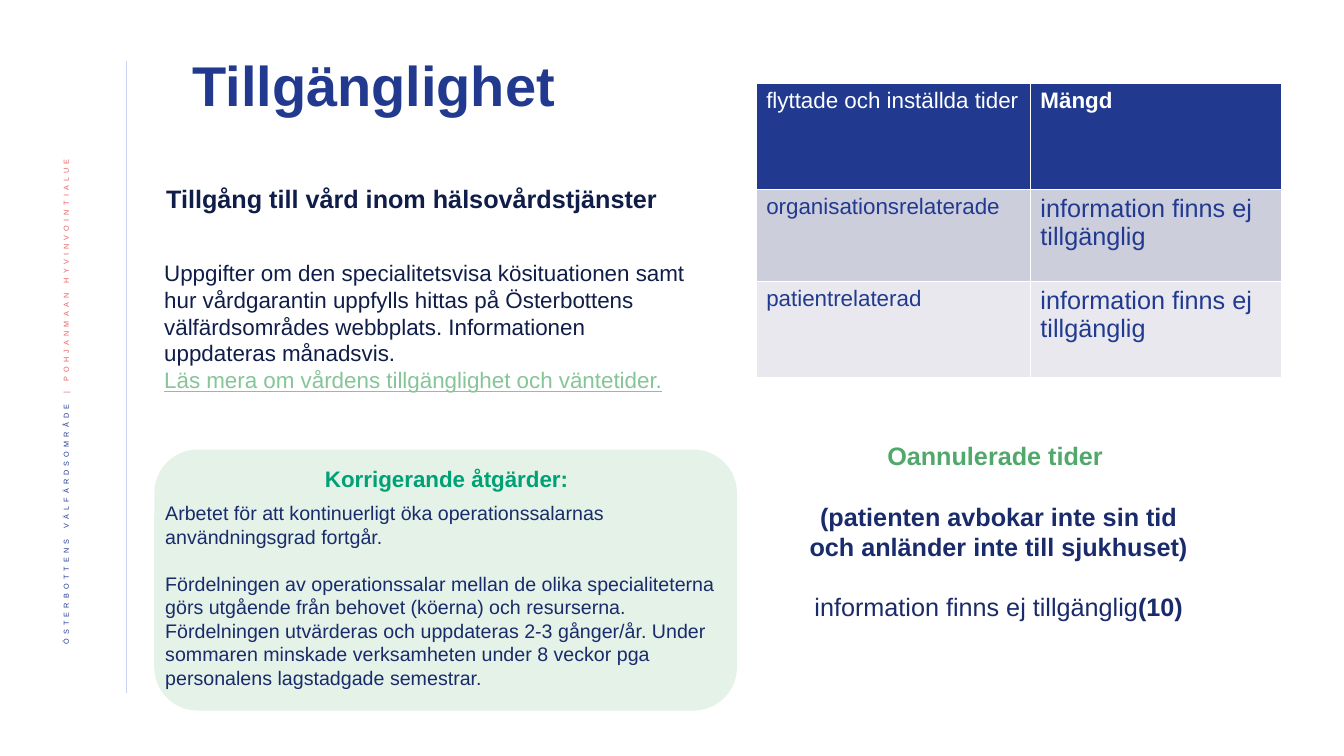
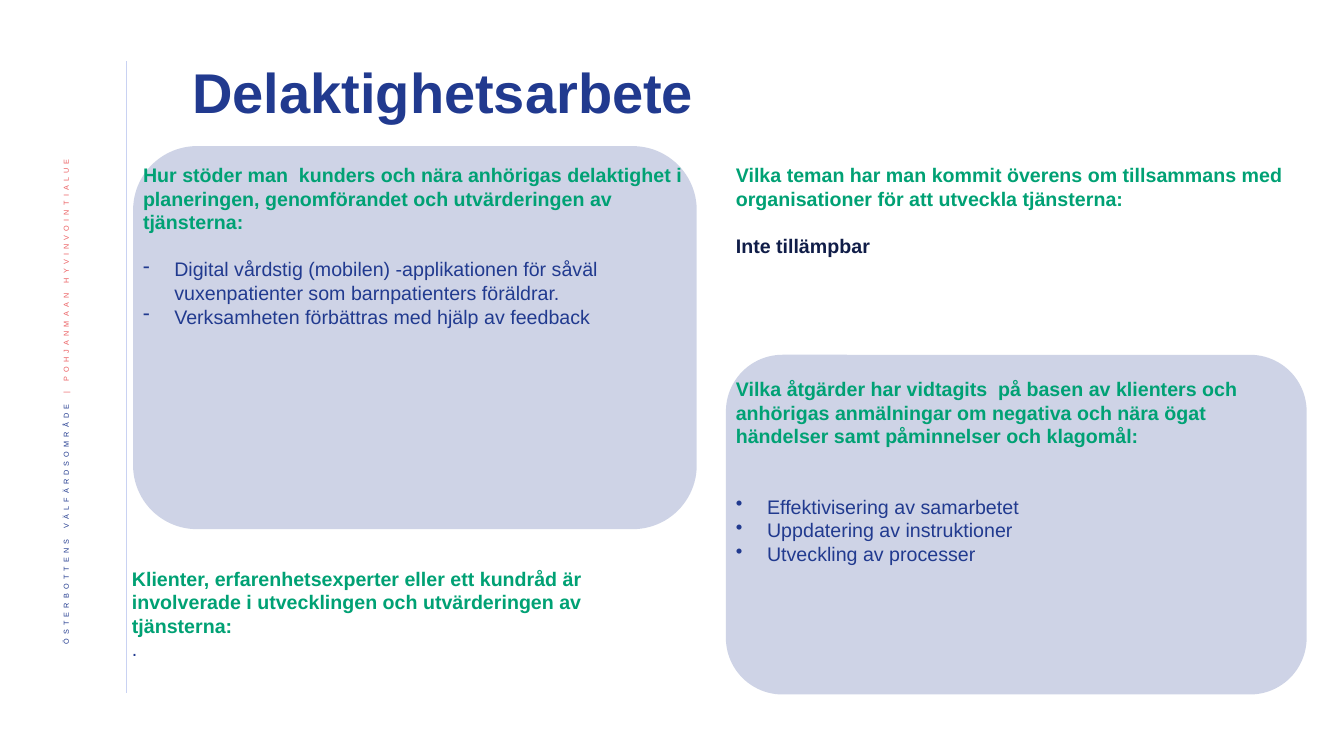
"""Build two slides on access to care and on participation work."""
from dataclasses import dataclass
from typing import NamedTuple, Optional

from lxml.etree import SubElement
from pptx import Presentation
from pptx.dml.color import RGBColor as Rgb
from pptx.enum.shapes import MSO_CONNECTOR as Link, MSO_SHAPE as Shape
from pptx.enum.text import MSO_ANCHOR as Anchor, PP_ALIGN as Align
from pptx.oxml.ns import qn
from pptx.util import Inches, Pt

FONT = "Arial"
LEAD = 1.2
HUES = {
    "blue": "213A8F", "navy": "192B6B", "ink": "101D48", "teal": "00A174",
    "green": "50A86A", "mint": "85C598", "coral": "EB5C5F", "rule": "C9D2F2",
    "white": "FFFFFF", "dark": "CCCEDB", "light": "E8E8EE",
}


class Area(NamedTuple):
    """A place on the slide, in inches."""
    left: float
    top: float
    width: float
    height: float

    def box(self) -> list:
        """Return the four lengths."""
        return [Inches(side) for side in self]


@dataclass
class Line:
    """One paragraph, with the blank lines above it as a gap."""
    text: str
    hue: str
    size: float = 14
    bold: bool = False
    under: bool = False
    align: Align = Align.LEFT
    gap: int = 0
    after: float = 0
    mark: str = ""
    lead: Optional[float] = None
    tail: str = ""


@dataclass
class Block:
    """A text box."""
    area: Area
    lines: list[Line]


@dataclass
class Panel:
    """A pale rounded panel."""
    area: Area
    hue: str


@dataclass
class Page:
    """The content of one slide."""
    title: str
    head: Area
    panels: list[Panel]
    blocks: list[Block]


def style(font, hue: str, size: float, bold: bool) -> None:
    """Format one font."""
    font.name, font.size, font.bold = FONT, Pt(size), bold
    font.color.rgb = Rgb.from_string(HUES[hue])


def write(para, line: Line) -> None:
    """Fill one paragraph."""
    para.text = line.text
    if line.mark:
        props = para._p.get_or_add_pPr()
        props.set("marL", str(Inches(0.31)))
        props.set("indent", str(-Inches(0.31)))
        SubElement(props, qn("a:buChar")).set("char", line.mark)
    para.alignment = line.align
    para.line_spacing = line.lead or Pt(line.size * LEAD)
    para.space_before = Pt(line.gap * line.size * LEAD)
    para.space_after = Pt(line.after)
    style(para.runs[0].font, line.hue, line.size, line.bold)
    if line.under:
        para.runs[0].font.underline = True
    if line.tail:
        run = para.add_run()
        run.text = line.tail
        style(run.font, line.hue, line.size, True)


def add_text(slide, block: Block, anchor: Anchor = Anchor.TOP):
    """Draw a text box and return its frame."""
    frame = slide.shapes.add_textbox(*block.area.box()).text_frame
    frame.word_wrap = True
    frame.vertical_anchor = anchor
    for num, line in enumerate(block.lines):
        write(frame.add_paragraph() if num else frame.paragraphs[0], line)
    return frame


def add_panel(slide, panel: Panel) -> None:
    """Draw a see-through rounded panel."""
    shape = slide.shapes.add_shape(Shape.ROUNDED_RECTANGLE, *panel.area.box())
    shape.shadow.inherit = False
    shape.line.fill.background()
    shape.fill.solid()
    shape.fill.fore_color.rgb = Rgb.from_string(HUES[panel.hue])
    tint = shape._element.spPr.find(qn("a:solidFill")).find(qn("a:srgbClr"))
    SubElement(tint, qn("a:alpha")).set("val", "22000")


def add_side(slide) -> None:
    """Draw the side rule and the upright name."""
    rule = slide.shapes.add_connector(
        Link.STRAIGHT, Inches(1.25), Inches(0.61), Inches(1.25), Inches(6.88))
    rule.line.color.rgb = Rgb.from_string(HUES["rule"])
    rule.line.width = Pt(0.5)
    SubElement(rule._element.spPr, qn("a:effectLst"))
    name = Line("ÖSTERBOTTENS VÄLFÄRDSOMRÅDE ", "blue", 9, align=Align.RIGHT,
                lead=0.9, tail="| POHJANMAAN HYVINVOINTIALUE ")
    frame = add_text(slide, Block(Area(0.42, 1.42, 0.52, 5.73), [name]),
                     Anchor.MIDDLE)
    frame._txBody.bodyPr.set("vert", "vert270")
    runs = frame.paragraphs[0].runs
    style(runs[1].font, "coral", 9, False)
    for run in runs:
        props = run._r.get_or_add_rPr()
        props.set("baseline", "30000")
        props.set("spc", "300")


def add_edges(cell, top: float, base: float) -> None:
    """Give a cell its white borders."""
    props = cell._tc.get_or_add_tcPr()
    for side, width in (("L", 0.5), ("R", 0.5), ("T", top), ("B", base)):
        edge = SubElement(props, qn(f"a:ln{side}"), w=str(Pt(width)))
        fill = SubElement(edge, qn("a:solidFill"))
        SubElement(fill, qn("a:srgbClr")).set("val", HUES["white"])


def add_grid(slide) -> None:
    """Draw the table of moved and cancelled times."""
    none = "information finns ej tillgänglig"
    rows = [("flyttade och inställda tider", "Mängd"),
            ("organisationsrelaterade", none), ("patientrelaterad", none)]
    fills = ["blue", "dark", "light"]
    area = Area(7.5, 0.83, 5.21, 2.91)
    grid = slide.shapes.add_table(3, 2, *area.box()).table
    for col, width in zip(grid.columns, (2.72, 2.49)):
        col.width = Inches(width)
    for row, height in zip(grid.rows, (1.05, 0.91, 0.95)):
        row.height = Inches(height)
    for num, texts in enumerate(rows):
        for col, text in enumerate(texts):
            cell = grid.cell(num, col)
            cell.text_frame.text = text
            add_edges(cell, 1.1 if num == 1 else 0.5, 0.5 if num else 1.1)
            cell.fill.solid()
            cell.fill.fore_color.rgb = Rgb.from_string(HUES[fills[num]])
            style(cell.text_frame.paragraphs[0].runs[0].font,
                  "blue" if num else "white", 18 if num and col else 16,
                  num == 0 and col == 1)


def add_page(deck, page: Page):
    """Draw one slide and return it."""
    slide = deck.slides.add_slide(deck.slide_layouts[6])
    add_side(slide)
    title = Line(page.title, "blue", 40, True, lead=0.9)
    add_text(slide, Block(page.head, [title]), Anchor.MIDDLE)
    for panel in page.panels:
        add_panel(slide, panel)
    for block in page.blocks:
        add_text(slide, block)
    return slide


def ask(text: str) -> Line:
    """Return a bold question."""
    return Line(text, "teal", bold=True)


def item(text: str, mark: str, gap: int = 0) -> Line:
    """Return a list item."""
    return Line(text, "blue", mark=mark, gap=gap)


def mid(text: str, hue: str, bold: bool = True, gap: int = 1,
        tail: str = "") -> Line:
    """Return a large centred line."""
    return Line(text, hue, 18, bold, align=Align.CENTER, gap=gap, tail=tail)


ACCESS = Page(
    "Tillgänglighet", Area(1.81, 0.45, 10.98, 0.85),
    [Panel(Area(1.53, 4.46, 5.78, 2.59), "mint")],
    [
        Block(Area(1.54, 4.57, 5.78, 2.34), [
            Line("Korrigerande åtgärder:", "teal", 16, True,
                 align=Align.CENTER, after=6),
            Line("Arbetet för att kontinuerligt öka operationssalarnas "
                 "användningsgrad fortgår.", "navy"),
            Line("Fördelningen av operationssalar mellan de olika "
                 "specialiteterna görs utgående från behovet (köerna) och "
                 "resurserna. Fördelningen utvärderas och uppdateras 2-3 "
                 "gånger/år. Under sommaren minskade verksamheten under 8 "
                 "veckor pga personalens lagstadgade semestrar.",
                 "navy", gap=1),
        ]),
        Block(Area(7.86, 4.32, 4.09, 1.92), [
            mid("Oannulerade tider ", "green", gap=0),
            mid("(patienten avbokar inte sin tid och anländer inte till "
                "sjukhuset)", "navy"),
            mid("information finns ej tillgänglig", "navy", False,
                tail="(10)"),
        ]),
        Block(Area(1.53, 2.52, 5.51, 1.45), [
            Line("Uppgifter om den specialitetsvisa kösituationen samt hur "
                 "vårdgarantin uppfylls hittas på Österbottens "
                 "välfärdsområdes webbplats. Informationen uppdateras "
                 "månadsvis.", "ink", 16),
            Line("Läs mera om vårdens tillgänglighet och väntetider.",
                 "mint", 16, under=True),
        ]),
        Block(Area(1.55, 1.77, 5.77, 0.4), [
            Line("Tillgång till vård inom hälsovårdstjänster", "ink", 18,
                 True),
        ]),
    ])

SHARING = Page(
    "Delaktighetsarbete", Area(1.81, 0.45, 9.98, 0.99),
    [Panel(Area(1.32, 1.45, 5.59, 3.8), "blue"),
     Panel(Area(7.2, 3.52, 5.76, 3.37), "blue")],
    [
        Block(Area(1.32, 1.57, 5.59, 2.22), [
            ask("Hur stöder man  kunders och nära anhörigas delaktighet i "
                "planeringen, genomförandet och utvärderingen av "
                "tjänsterna:"),
            item("Digital vårdstig (mobilen) -applikationen för såväl "
                 "vuxenpatienter som barnpatienters föräldrar.", "-", 1),
            item("Verksamheten förbättras med hjälp av feedback", "-"),
        ]),
        Block(Area(7.2, 1.57, 5.76, 1.31), [
            ask("Vilka teman har man kommit överens om tillsammans med "
                "organisationer för att utveckla tjänsterna:"),
            Line("Inte tillämpbar", "ink", bold=True, gap=1),
        ]),
        Block(Area(1.21, 5.57, 5.59, 1.28), [
            ask("Klienter, erfarenhetsexperter eller ett kundråd är "
                "involverade i utvecklingen och utvärderingen av "
                "tjänsterna:"),
            Line(".", "blue"),
        ]),
        Block(Area(7.2, 3.69, 5.76, 2.69), [
            ask("Vilka åtgärder har vidtagits  på basen av klienters och "
                "anhörigas anmälningar om negativa och nära ögat händelser "
                "samt påminnelser och klagomål:"),
            item("Effektivisering av samarbetet", "•", 2),
            item("Uppdatering av instruktioner", "•"),
            item("Utveckling av processer", "•"),
        ]),
    ])


def main() -> None:
    """Build and save the deck."""
    deck = Presentation()
    deck.slide_width, deck.slide_height = Inches(13.33), Inches(7.5)
    add_grid(add_page(deck, ACCESS))
    add_page(deck, SHARING)
    deck.save("out.pptx")


if __name__ == "__main__":
    main()
